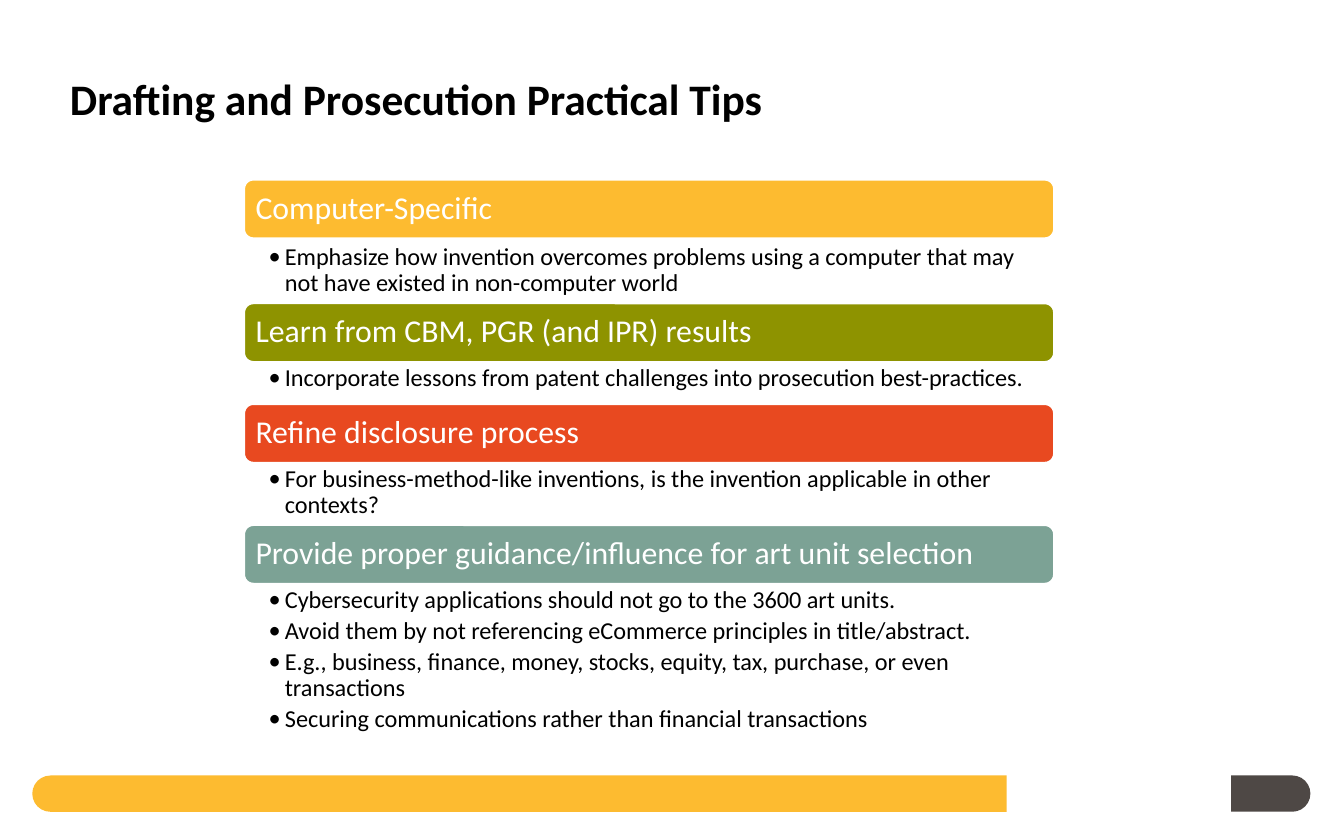
from lxml import etree
from pptx import Presentation, util as u
from pptx.dml.color import RGBColor
from pptx.enum import shapes, text
from pptx.oxml import ns

HUES = {"gold": "FDBB30", "gray": "4E4845", "olive": "8E9300", "red": "E84920",
        "sage": "7CA295", "white": "FFFFFF", "black": "000000"}
LEFT, TOP, WIDTH, HEAD = 1.81, 1.33, 6.04, 0.45
TIPS = [
    ("gold", "Computer-Specific", 0.02, 0.45,
     ["Emphasize how invention overcomes problems using a computer that may "
      "not have existed in non-computer world"]),
    ("olive", "Learn from CBM, PGR (and IPR) results", 0, 0.3,
     ["Incorporate lessons from patent challenges into prosecution best-practices."]),
    ("red", "Refine disclosure process", 0, 0.45,
     ["For business-method-like inventions, is the invention applicable in other contexts?"]),
    ("sage", "Provide proper guidance/influence for art unit selection", 0, 1.17,
     ["Cybersecurity applications should not go to the 3600 art units.",
      "Avoid them by not referencing eCommerce principles in title/abstract.",
      "E.g., business, finance, money, stocks, equity, tax, purchase, or even transactions",
      "Securing communications rather than financial transactions"]),
]


class Deck:
    """Hold the style and the current slide, and draw each kind of element."""

    def __init__(self):
        self.prs = Presentation()
        self.prs.slide_width, self.prs.slide_height = u.Inches(10), u.Inches(6.25)
        self.slide = self.prs.slides.add_slide(self.prs.slide_layouts[5])
        self.font = "Calibri"

    def hue(self, name):
        return RGBColor.from_string(HUES[name])

    def label(self, frame, lines, size, hue, pads, anchor, bold=False, bullet=False):
        sides = ("margin_left", "margin_top", "margin_right", "margin_bottom")
        form = dict(zip(sides, map(u.Inches, pads)), word_wrap=True,
                    auto_size=text.MSO_AUTO_SIZE.NONE, vertical_anchor=anchor)
        for key, val in form.items():
            setattr(frame, key, val)
        for i, line in enumerate(lines):
            para = frame.add_paragraph() if i else frame.paragraphs[0]
            if bullet:
                self.dot(para)
            look = {"alignment": text.PP_ALIGN.LEFT, "line_spacing": 0.9,
                    "space_before": u.Pt(0), "space_after": u.Pt(0.2 * size if bullet else 0)}
            for key, val in look.items():
                setattr(para, key, val)
            run = para.add_run()
            run.text = line
            for key, val in {"name": self.font, "size": u.Pt(size), "bold": bold}.items():
                setattr(run.font, key, val)
            run.font.color.rgb = self.hue(hue)

    def dot(self, para):
        props = para._p.get_or_add_pPr()
        props.set("marL", str(u.Inches(0.12)))
        props.set("indent", str(-u.Inches(0.12)))
        etree.SubElement(props, ns.qn("a:buFont")).set("typeface", self.font)
        etree.SubElement(props, ns.qn("a:buChar")).set("char", "•")

    def title(self, line, box):
        item = self.slide.shapes.title
        for key, val in zip(("left", "top", "width", "height"), box):
            setattr(item, key, u.Inches(val))
        self.label(item.text_frame, [line], 23.3, "black", (0.1, 0.05, 0.1, 0.05),
                   text.MSO_ANCHOR.BOTTOM, bold=True)

    def shape(self, kind, box, hue):
        item = self.slide.shapes.add_shape(kind, *map(u.Inches, box))
        item.shadow.inherit = False
        item.fill.solid()
        item.fill.fore_color.rgb = self.hue(hue)
        item.line.fill.background()
        return item

    def bar(self, box, turn, hue):
        item = self.shape(shapes.MSO_SHAPE.ROUND_2_SAME_RECTANGLE, box, hue)
        item.adjustments[0] = 0.5
        item.rotation = turn

    def head(self, line, top, hue):
        item = self.shape(shapes.MSO_SHAPE.ROUNDED_RECTANGLE, (LEFT, top, WIDTH, HEAD), hue)
        item.line.color.rgb = self.hue("white")
        item.line.width = u.Pt(2)
        self.label(item.text_frame, [line], 17, "white", (0.07, 0.07, 0.07, 0.07),
                   text.MSO_ANCHOR.MIDDLE)

    def body(self, lines, top, high):
        item = self.slide.shapes.add_textbox(*map(u.Inches, (LEFT, top, WIDTH, high)))
        self.label(item.text_frame, lines, 13, "black", (0.19, 0.02, 0.13, 0.02),
                   text.MSO_ANCHOR.TOP, bullet=True)


def main():
    deck = Deck()
    deck.bar((3.73, 2.28, 0.27, 7.25), 270, "gold")
    deck.bar((9.32, 5.61, 0.27, 0.59), 90, "gray")
    deck.title("Drafting and Prosecution Practical Tips", (0.42, 0.22, 9.17, 0.76))
    top = TOP
    for hue, head, gap, high, lines in TIPS:
        deck.head(head, top, hue)
        top += HEAD + gap
        deck.body(lines, top, high)
        top += high
    deck.prs.save("out.pptx")


if __name__ == "__main__":
    main()
